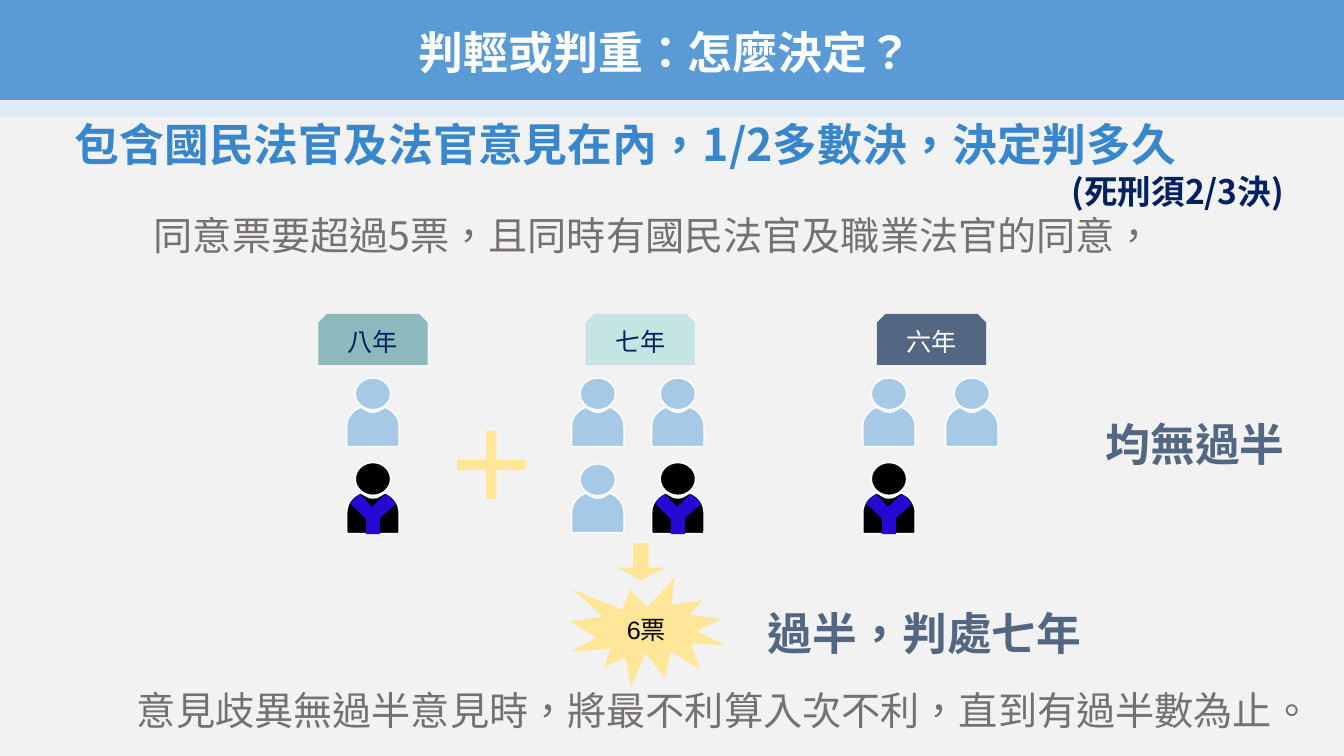
from dataclasses import dataclass
from itertools import chain, islice

from lxml import etree
from pptx import Presentation
from pptx.dml.color import RGBColor
from pptx.enum.lang import MSO_LANGUAGE_ID
from pptx.enum.shapes import MSO_SHAPE
from pptx.enum.text import MSO_ANCHOR, MSO_AUTO_SIZE, PP_ALIGN
from pptx.oxml.ns import qn
from pptx.util import Pt

RECTANGLE, CROSS, BURST = MSO_SHAPE.RECTANGLE, MSO_SHAPE.CROSS, MSO_SHAPE.EXPLOSION1
SNIPPED, DOWN_ARROW = MSO_SHAPE.SNIP_2_SAME_RECTANGLE, MSO_SHAPE.DOWN_ARROW
LEFT, CENTER, RIGHT = PP_ALIGN.LEFT, PP_ALIGN.CENTER, PP_ALIGN.RIGHT
MIDDLE = MSO_ANCHOR.MIDDLE
GROW = MSO_AUTO_SIZE.SHAPE_TO_FIT_TEXT
TAIWAN = MSO_LANGUAGE_ID.TRADITIONAL_CHINESE
CJK, LATIN = "Noto Sans CJK SC", "Arial"
NAVY, SLATE, GRAY = "002060", "546782", "767171"
WHITE, BLACK, YELLOW = "FFFFFF", "000000", "FFE699"
CITIZEN, ROBE = "A6C9E8", "2609D5"
CITIZEN_HEIGHT, JUDGE_HEIGHT = 49, 50.7
FIRST_ROW = 270
SECOND_ROW = {"citizen": 331.4, "judge": 330.4}

Point = tuple[float, float]
Segment = tuple[Point, ...]


@dataclass
class Line:
    text: str
    size: float
    color: str
    face: str = CJK
    bold: bool = False
    align: PP_ALIGN = LEFT
    indent: float = 0


@dataclass
class Camp:
    """Voters for one sentence; columns are the centre lines of the figures."""
    sentence: str
    tag_left: float
    tag_fill: str
    tag_color: str
    columns: tuple[float, ...]
    second_row: tuple[str, ...]


@dataclass
class Contour:
    """Closed outline; a segment of one point is straight, of three a Bézier curve."""
    start: Point
    segments: list[Segment]


CAMPS = [
    Camp("八年", 227.4, "8DB9BC", NAVY, (266.4,), ("judge",)),
    Camp("七年", 418.4, "C5E5E2", NAVY, (427, 484.2), ("citizen", "judge")),
    Camp("六年", 626.4, SLATE, WHITE, (635, 694.2), ("judge",)),
]

BODY = Contour((-8.6, 20.9), [
    ((-5, 23),),
    ((-3.6, 24), (-2, 24.5), (0, 24.5)),
    ((2, 24.5), (3.6, 24), (5, 23)),
    ((8.6, 20.9),), ((10.1, 21.6),),
    ((15.1, 23.8), (18.7, 28.8), (18.7, 34.6)),
    ((18.7, 47),), ((18.5, 49),), ((-18.5, 49),), ((-18.7, 47),), ((-18.7, 34.6),),
    ((-18.7, 28.8), (-15.1, 23.8), (-10.1, 21.6)),
])
HEAD = Contour((0, 0), [
    ((7, 0), (12.6, 5.1), (12.6, 11.3)),
    ((12.6, 17.5), (7, 22.6), (0, 22.6)),
    ((-7, 22.6), (-12.6, 17.5), (-12.6, 11.3)),
    ((-12.6, 5.1), (-7, 0), (0, 0)),
])
COLLAR = Contour((-9.4, 21.6), [
    ((-0.7, 30.6),), ((9.4, 21.6),), ((16.6, 28.5),), ((6.5, 36.9),), ((5, 38.3),),
    ((5, 49.4),), ((-5, 49.4),), ((-5, 38.9),), ((-16.6, 27.8),),
])


def rgb(color: str) -> RGBColor:
    return RGBColor.from_string(color)


def write(frame, lines: list[Line]) -> None:
    frame.word_wrap = True
    for index, line in enumerate(lines):
        paragraph = frame.add_paragraph() if index else frame.paragraphs[0]
        paragraph.text = line.text
        paragraph.alignment = line.align
        if line.indent:
            paragraph._p.get_or_add_pPr().set("marL", str(Pt(line.indent)))
        font = paragraph.font
        font.size, font.bold, font.language_id = Pt(line.size), line.bold, TAIWAN
        font.color.rgb = rgb(line.color)
        font.name = line.face
        east_asian = etree.SubElement(font._rPr, qn("a:ea"))
        east_asian.set("typeface", CJK)


def add_text(slide, left: float, top: float, width: float, height: float,
             *lines: Line) -> None:
    box = slide.shapes.add_textbox(Pt(left), Pt(top), Pt(width), Pt(height))
    write(box.text_frame, list(lines))
    box.text_frame.auto_size = GROW


def paint(shape, fill: str, outline: str | None = None) -> None:
    shape.shadow.inherit = False
    shape.fill.solid()
    shape.fill.fore_color.rgb = rgb(fill)
    if outline:
        shape.line.color.rgb = rgb(outline)
        shape.line.width = Pt(1)
    else:
        shape.line.fill.background()


def add_block(slide, kind: MSO_SHAPE, left: float, top: float, width: float,
              height: float, fill: str, label: Line | None = None,
              adjustments: tuple[float, ...] = ()) -> None:
    block = slide.shapes.add_shape(kind, Pt(left), Pt(top), Pt(width), Pt(height))
    paint(block, fill)
    for index, value in enumerate(adjustments):
        block.adjustments[index] = value
    if label:
        write(block.text_frame, [label])
        block.text_frame.vertical_anchor = MIDDLE


def bend(shape, segments: list[Segment]) -> None:
    """Turn the straight steps through each three-point segment into one curve."""
    steps = iter(list(shape._element.iter(qn("a:lnTo"))))
    for segment in segments:
        run = list(islice(steps, len(segment)))
        if len(run) == 3:
            curve = etree.Element(qn("a:cubicBezTo"))
            run[0].addprevious(curve)
            for step in run:
                curve.append(step[0])
                step.getparent().remove(step)


def add_outline(slide, center: float, top: float, contours: list[Contour],
                fill: str, outline: str | None = None, stretch: float = 1) -> None:
    def place(point: Point) -> tuple[int, int]:
        return Pt(center + point[0]), Pt(top + point[1] * stretch)

    builder = slide.shapes.build_freeform(*place(contours[0].start))
    for index, contour in enumerate(contours):
        if index:
            builder.move_to(*place(contour.start))
        points = chain.from_iterable(contour.segments)
        builder.add_line_segments([place(point) for point in points], close=True)
    shape = builder.convert_to_shape()
    bend(shape, [segment for contour in contours for segment in contour.segments])
    paint(shape, fill, outline)


def add_person(slide, role: str, center: float, top: float) -> None:
    is_judge = role == "judge"
    stretch = JUDGE_HEIGHT / CITIZEN_HEIGHT if is_judge else 1
    add_outline(slide, center, top, [BODY, HEAD],
                BLACK if is_judge else CITIZEN, WHITE, stretch)
    if is_judge:
        add_outline(slide, center, top, [COLLAR], ROBE, stretch=stretch)


def add_camp(slide, camp: Camp) -> None:
    label = Line(camp.sentence, 18, camp.tag_color, LATIN, align=CENTER)
    add_block(slide, SNIPPED, camp.tag_left, 224.3, 78, 36.4, camp.tag_fill, label)
    for center in camp.columns:
        add_person(slide, "citizen", center, FIRST_ROW)
    for role, center in zip(camp.second_row, camp.columns):
        add_person(slide, role, center, SECOND_ROW[role])


def main() -> None:
    deck = Presentation()
    deck.slide_width, deck.slide_height = Pt(960), Pt(540)
    slide = deck.slides.add_slide(deck.slide_layouts[6])
    slide.background.fill.solid()
    slide.background.fill.fore_color.rgb = rgb("F2F2F2")

    add_block(slide, RECTANGLE, 0, 8.4, 960, 75, "DEEBF7")
    add_block(slide, RECTANGLE, 0, -3.6, 960, 75, "5B9BD5")
    add_text(slide, 292.2, 14.4, 421, 46,
             Line("判輕或判重：怎麼決定？", 32, WHITE, bold=True))
    add_text(slide, 46.3, 80, 878, 109,
             Line("包含國民法官及法官意見在內，1/2多數決，決定判多久", 32, "3886CC", bold=True),
             Line("(死刑須2/3決)", 24, NAVY, bold=True, align=RIGHT),
             Line("同意票要超過5票，且同時有國民法官及職業法官的同意，", 28, GRAY, indent=56.5))

    for camp in CAMPS:
        add_camp(slide, camp)
    add_block(slide, CROSS, 326.6, 307.8, 48.6, 48.6, YELLOW, adjustments=(0.425,))
    add_block(slide, DOWN_ARROW, 440.8, 388, 34, 26.6, YELLOW, adjustments=(0.322, 0.34))
    add_text(slide, 782.6, 294.2, 159, 46, Line("均無過半", 32, SLATE, LATIN, True))
    add_block(slide, BURST, 407, 412.6, 111, 78.5, YELLOW,
              Line("6票", 18, BLACK, LATIN, align=CENTER))
    add_text(slide, 541.4, 429, 258, 46, Line("過半，判處七年", 32, SLATE, LATIN, True))
    add_text(slide, 90.7, 486.7, 868, 41,
             Line("意見歧異無過半意見時，將最不利算入次不利，直到有過半數為止。", 28, GRAY))
    deck.save("out.pptx")


if __name__ == "__main__":
    main()
